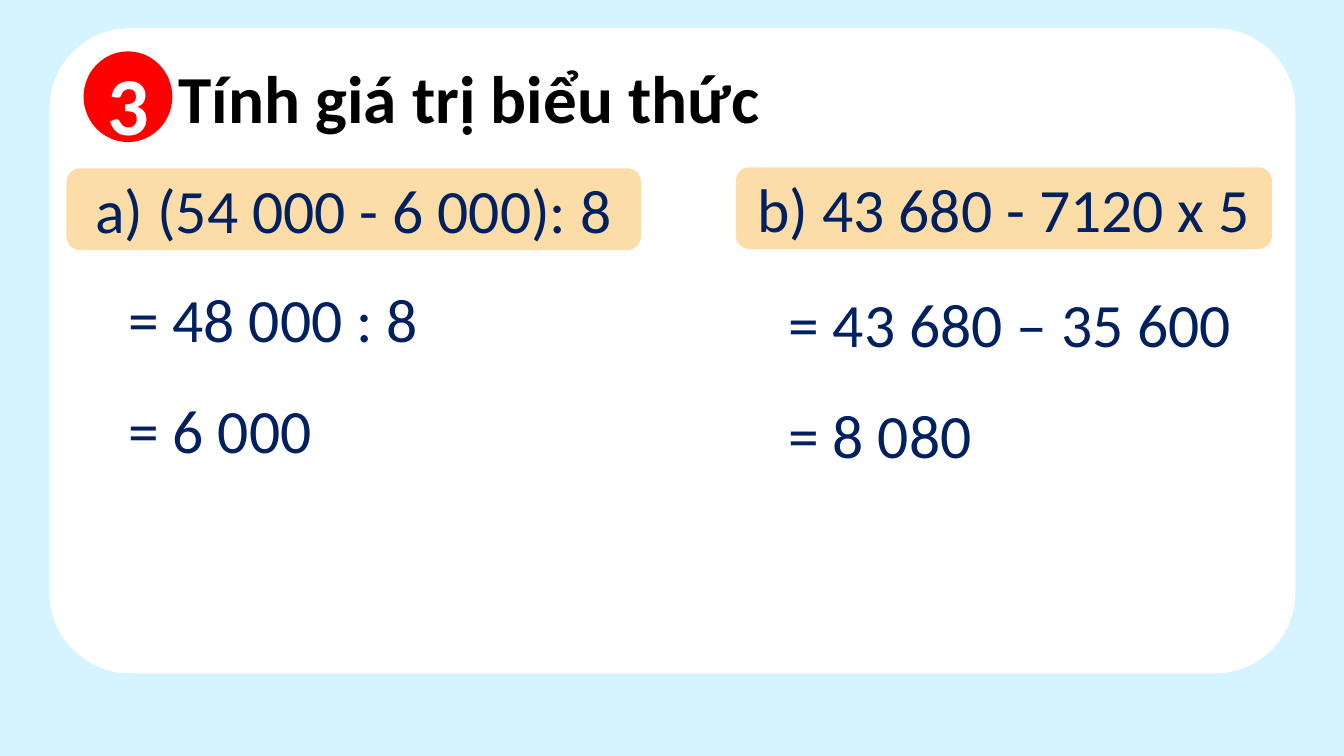
"""Builds a maths slide that evaluates two expressions step by step."""
from lxml import etree
from pptx import Presentation
from pptx import util as u
from pptx.dml.color import RGBColor
from pptx.enum import shapes, text
from pptx.oxml import ns

SKY = RGBColor(0xD6, 0xF4, 0xFF)
WHITE = RGBColor(0xFF, 0xFF, 0xFF)
BLACK = RGBColor(0, 0, 0)
RED = RGBColor(0xFF, 0, 0)
PEACH = RGBColor(0xFC, 0xDD, 0xA7)
NAVY = RGBColor(0, 0x20, 0x60)

EXERCISES = [
    {"expression": "a) (54 000 - 6 000): 8", "label_at": (4.95, 22.27, 42.75, 10.8),
     "steps": ["= 48 000 : 8", "= 6 000"], "steps_at": (9.53, 32.27, 24.15, 29.6)},
    {"expression": "b) 43 680 - 7120 x 5", "label_at": (54.75, 22.13, 39.9, 10.8),
     "steps": ["= 43 680 – 35 600", "= 8 080"], "steps_at": (58.65, 32.93, 35.85, 28.13)},
]


class SlideBuilder:
    """Holds the style and the current slide; places are percentages of its size."""

    font_name = "Calibri"

    def __init__(self, presentation, layout_index):
        self.width, self.height = presentation.slide_width, presentation.slide_height
        self.slide = presentation.slides.add_slide(presentation.slide_layouts[layout_index])
        self.slide.background.fill.solid()
        self.slide.background.fill.fore_color.rgb = SKY

    def box(self, place):
        left, top, width, height = place
        return [round(self.width * left / 100), round(self.height * top / 100),
                round(self.width * width / 100), round(self.height * height / 100)]

    def set_text(self, shape, lines, size, color, bold=False, centered=True,
                 anchor=text.MSO_ANCHOR.TOP, spacing=1.0, inset=None):
        frame = shape.text_frame
        frame.text = "\n".join(lines)
        frame_format = {"word_wrap": True, "auto_size": text.MSO_AUTO_SIZE.NONE,
                        "vertical_anchor": anchor}
        if inset is not None:
            frame_format.update({f"margin_{side}": inset
                                 for side in ("left", "top", "right", "bottom")})
        for name, value in frame_format.items():
            setattr(frame, name, value)
        alignment = text.PP_ALIGN.CENTER if centered else text.PP_ALIGN.LEFT
        paragraph_format = {"alignment": alignment, "line_spacing": spacing,
                            "space_before": u.Pt(0), "space_after": u.Pt(0)}
        font_format = {"name": self.font_name, "size": u.Pt(size), "bold": bold}
        for paragraph in frame.paragraphs:
            for name, value in paragraph_format.items():
                setattr(paragraph, name, value)
            for run in paragraph.runs:
                for name, value in font_format.items():
                    setattr(run.font, name, value)
                run.font.color.rgb = color

    def shape(self, kind, place, color):
        shape = self.slide.shapes.add_shape(kind, *self.box(place))
        shape.shadow.inherit = False
        shape.fill.solid()
        shape.fill.fore_color.rgb = color
        shape.line.fill.background()
        return shape

    def text_box(self, place, lines, size, color, **style):
        shape = self.slide.shapes.add_textbox(*self.box(place))
        self.set_text(shape, lines, size, color, **style)

    def placeholder(self, index, place, lines, size, color, **style):
        shape = self.slide.placeholders[index]
        for name, value in zip(("left", "top", "width", "height"), self.box(place)):
            setattr(shape, name, value)
        shape.element.getparent().append(shape.element)
        self.set_text(shape, lines, size, color, **style)
        return shape

    def steps(self, index, place, lines):
        shape = self.placeholder(index, place, lines, 44, NAVY, centered=False,
                                 spacing=1.5, inset=0)
        for paragraph in shape.text_frame.paragraphs:
            properties = paragraph._p.get_or_add_pPr()
            properties.set("marL", "0")
            properties.set("indent", "0")
            etree.SubElement(properties, ns.qn("a:buNone"))

    def label(self, place, expression):
        shape = self.shape(shapes.MSO_SHAPE.ROUNDED_RECTANGLE, place, PEACH)
        self.set_text(shape, [expression], 44, NAVY, anchor=text.MSO_ANCHOR.MIDDLE)


def main():
    presentation = Presentation()
    presentation.slide_width, presentation.slide_height = u.Inches(13.33), u.Inches(7.5)
    builder = SlideBuilder(presentation, layout_index=3)

    card = builder.shape(shapes.MSO_SHAPE.ROUNDED_RECTANGLE, (3.68, 3.73, 92.7, 85.33), WHITE)
    card.adjustments[0] = 0.125
    builder.shape(shapes.MSO_SHAPE.OVAL, (6.22, 6.8, 6.6, 12), RED)
    builder.text_box((3.98, 6.4, 11.18, 14.53), ["3"], 58.7, WHITE, bold=True)
    builder.placeholder(0, (2.55, 6.8, 64.73, 12.13), ["Tính giá trị biểu thức"],
                        48, BLACK, bold=True)

    for index, exercise in enumerate(EXERCISES, start=1):
        builder.label(exercise["label_at"], exercise["expression"])
        builder.steps(index, exercise["steps_at"], exercise["steps"])

    presentation.save("out.pptx")


if __name__ == "__main__":
    main()
